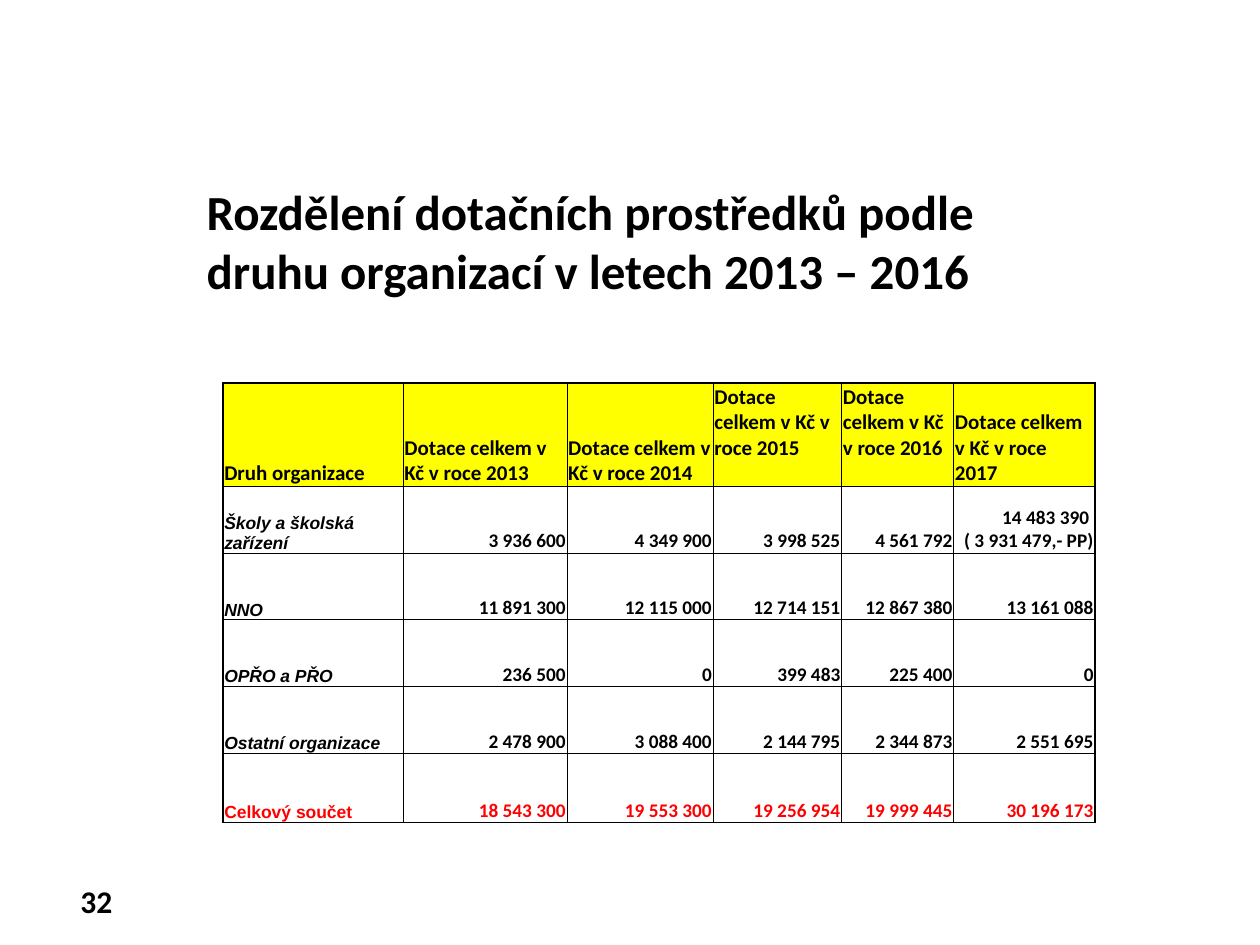
from lxml import etree
from pptx import Presentation
from pptx.dml.color import RGBColor
from pptx.enum.text import MSO_ANCHOR, PP_ALIGN
from pptx.oxml.ns import qn
from pptx.util import Inches, Pt

TOP, MIDDLE, BOTTOM = MSO_ANCHOR.TOP, MSO_ANCHOR.MIDDLE, MSO_ANCHOR.BOTTOM
LEFT, RIGHT = PP_ALIGN.LEFT, PP_ALIGN.RIGHT
COLORS = {"black": "000000", "yellow": "FFFF00", "red": "FF0000"}

rows = [
    ["Druh organizace"] + [f"Dotace celkem v Kč v roce {year}" for year in range(2013, 2018)],
    ["Školy a školská zařízení", "3 936 600", "4 349 900", "3 998 525", "4 561 792",
     "14 483 390 \n( 3 931 479,- PP)"],
    ["NNO", "11 891 300", "12 115 000", "12 714 151", "12 867 380", "13 161 088"],
    ["OPŘO a PŘO", "236 500", "0", "399 483", "225 400", "0"],
    ["Ostatní organizace", "2 478 900", "3 088 400", "2 144 795", "2 344 873", "2 551 695"],
    ["Celkový součet", "18 543 300", "19 553 300", "19 256 954", "19 999 445", "30 196 173"],
]
col_widths = [1.43, 1.3, 1.16, 1.02, 0.89, 1.12]
row_heights = [0.82, 0.53, 0.53, 0.53, 0.53, 0.55]


def write(tf, text, align, size, name="Calibri", color="black", italic=False):
    tf.word_wrap = True
    tf.text = text
    font_format = {"name": name, "size": Pt(size), "bold": True, "italic": italic}
    for p in tf.paragraphs:
        p.alignment = align
        for r in p.runs:
            for key, value in font_format.items():
                setattr(r.font, key, value)
            r.font.color.rgb = RGBColor.from_string(COLORS[color])


def add_borders(cell, widths):
    tc_pr = cell._tc.get_or_add_tcPr()
    for i, (side, width) in enumerate(widths.items()):
        ln = etree.Element(qn(f"a:ln{side}"), w=str(Pt(width)))
        fill = etree.SubElement(ln, qn("a:solidFill"))
        etree.SubElement(fill, qn("a:srgbClr"), val=COLORS["black"])
        tc_pr.insert(i, ln)


prs = Presentation()
prs.slide_width, prs.slide_height = Inches(10), Inches(7.5)
s = prs.slides.add_slide(prs.slide_layouts[5])

title = s.shapes.title
title.left, title.top, title.width, title.height = (Inches(v) for v in (1.54, 1.39, 6.54, 1.82))
title.text_frame.vertical_anchor = TOP
write(title.text_frame, "Rozdělení dotačních prostředků podle druhu organizací v letech 2013 – 2016",
      LEFT, 28)

number = s.shapes.add_textbox(Inches(0.28), Inches(6.95), Inches(0.71), Inches(0.4))
number.text_frame.vertical_anchor = MIDDLE
write(number.text_frame, "32", RIGHT, 18)

frame = s.shapes.add_table(len(rows), len(col_widths), Inches(1.77), Inches(3.04),
                           Inches(sum(col_widths)), Inches(sum(row_heights)))
table = frame.table
table.first_row = table.horz_banding = False
for col, width in zip(table.columns, col_widths):
    col.width = Inches(width)
for row, height in zip(table.rows, row_heights):
    row.height = Inches(height)

last_row, last_col = len(rows) - 1, len(col_widths) - 1
for i, row in enumerate(rows):
    for j, text in enumerate(row):
        cell = table.cell(i, j)
        cell.margin_left = cell.margin_right = cell.margin_top = Inches(0.01)
        cell.margin_bottom = 0
        cell.vertical_anchor = TOP if i == 0 and j in (3, 4) else BOTTOM
        color = "red" if i == last_row else "black"
        if i == 0:
            cell.fill.solid()
            cell.fill.fore_color.rgb = RGBColor.from_string(COLORS["yellow"])
            write(cell.text_frame, text, LEFT, 12)
        elif j == 0:
            cell.fill.background()
            write(cell.text_frame, text, LEFT, 10, "Arial", color, i < last_row)
        else:
            cell.fill.background()
            write(cell.text_frame, text, RIGHT, 11, color=color)
        add_borders(cell, {
            "L": 1 if j == 0 else 0.5,
            "R": 1 if j == last_col else 0.5,
            "T": 1 if i < 2 else 0.5,
            "B": 1 if i in (0, last_row) else 0.5,
        })

prs.save("out.pptx")
